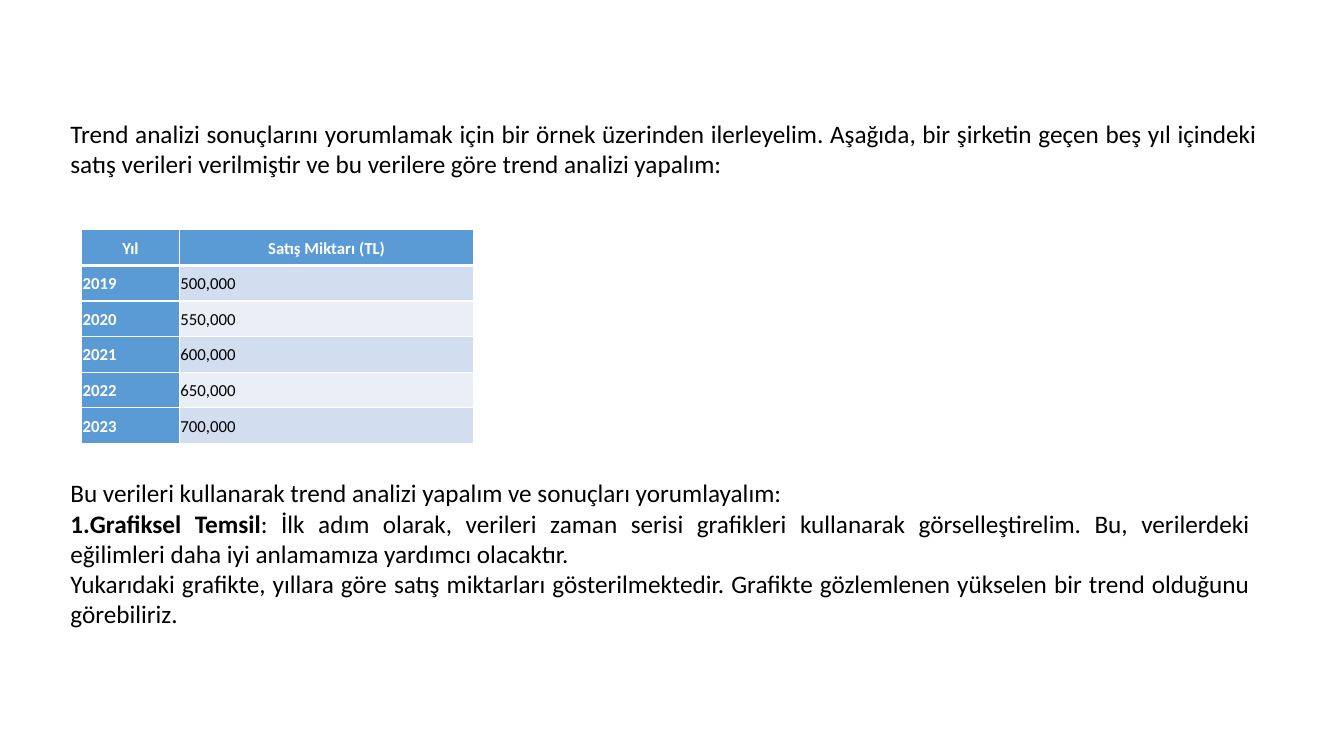
import lxml.etree
import pptx
import pptx.dml.color
import pptx.enum.text
import pptx.oxml.ns
import pptx.util

PX = 9144
FONT = "Calibri"
WHITE = pptx.dml.color.RGBColor(0xFF, 0xFF, 0xFF)
BLACK = pptx.dml.color.RGBColor(0x00, 0x00, 0x00)
BLUE = pptx.dml.color.RGBColor(0x5B, 0x9B, 0xD5)
BANDS = [
    pptx.dml.color.RGBColor(0xD2, 0xDE, 0xEF),
    pptx.dml.color.RGBColor(0xEA, 0xEF, 0xF7),
]
ALIGN = pptx.enum.text.PP_ALIGN

INTRO = [
    ["Trend analizi sonuçlarını yorumlamak için bir örnek üzerinden ilerleyelim. "
     "Aşağıda, bir şirketin geçen beş yıl içindeki satış verileri verilmiştir ve "
     "bu verilere göre trend analizi yapalım:"],
]
COMMENTARY = [
    ["Bu verileri kullanarak trend analizi yapalım ve sonuçları yorumlayalım:"],
    ["Grafiksel Temsil",
     ": İlk adım olarak, verileri zaman serisi grafikleri kullanarak "
     "görselleştirelim. Bu, verilerdeki eğilimleri daha iyi anlamamıza yardımcı "
     "olacaktır."],
    ["Yukarıdaki grafikte, yıllara göre satış miktarları gösterilmektedir. "
     "Grafikte gözlemlenen yükselen bir trend olduğunu görebiliriz."],
]
SALES = [
    ("Yıl", "Satış Miktarı (TL)"),
    ("2019", "500,000"),
    ("2020", "550,000"),
    ("2021", "600,000"),
    ("2022", "650,000"),
    ("2023", "700,000"),
]


def style_run(run, size, color, bold):
    run.font.name = FONT
    run.font.size = pptx.util.Pt(size)
    run.font.color.rgb = color
    run.font.bold = bold


def number_paragraph(paragraph):
    properties = paragraph._p.get_or_add_pPr()
    lxml.etree.SubElement(
        properties, pptx.oxml.ns.qn("a:buAutoNum"), type="arabicPeriod")


def add_text(slide, left, top, width, height, paragraphs):
    box = slide.shapes.add_textbox(left * PX, top * PX, width * PX, height * PX)
    frame = box.text_frame
    frame.word_wrap = True
    frame.auto_size = pptx.enum.text.MSO_AUTO_SIZE.SHAPE_TO_FIT_TEXT
    for index, parts in enumerate(paragraphs):
        paragraph = frame.add_paragraph() if index else frame.paragraphs[0]
        paragraph.alignment = ALIGN.JUSTIFY
        numbered = len(parts) > 1
        if numbered:
            number_paragraph(paragraph)
        for position, part in enumerate(parts):
            run = paragraph.add_run()
            run.text = part
            style_run(run, 18, BLACK, numbered and position == 0)


def add_borders(cell, widths):
    properties = cell._tc.get_or_add_tcPr()
    for side, width in widths.items():
        line = lxml.etree.SubElement(
            properties, pptx.oxml.ns.qn("a:ln" + side),
            w=str(pptx.util.Pt(width)))
        fill = lxml.etree.SubElement(line, pptx.oxml.ns.qn("a:solidFill"))
        lxml.etree.SubElement(
            fill, pptx.oxml.ns.qn("a:srgbClr"), val=str(WHITE))


def style_cell(cell, row, column):
    heading = row == 0 or column == 0
    cell.margin_left = cell.margin_right = PX
    cell.margin_top = cell.margin_bottom = PX
    cell.vertical_anchor = pptx.enum.text.MSO_ANCHOR.MIDDLE
    add_borders(cell, {"L": 1, "R": 1, "T": 3 if row == 1 else 1,
                       "B": 3 if row == 0 else 1})
    cell.fill.solid()
    cell.fill.fore_color.rgb = BLUE if heading else BANDS[(row - 1) % 2]
    paragraph = cell.text_frame.paragraphs[0]
    paragraph.line_spacing = 1.07
    paragraph.alignment = ALIGN.CENTER if row == 0 else ALIGN.LEFT
    style_run(paragraph.runs[0], 12, WHITE if heading else BLACK, heading)


def add_sales_table(slide, left, top, width, height):
    table = slide.shapes.add_table(
        len(SALES), 2, left * PX, top * PX, width * PX, height * PX).table
    table.first_col = True
    year_width = width // 4
    table.columns[0].width = year_width * PX
    table.columns[1].width = (width - year_width) * PX
    for row, values in enumerate(SALES):
        for column, value in enumerate(values):
            cell = table.cell(row, column)
            cell.text_frame.text = value
            style_cell(cell, row, column)


def build_slide(presentation):
    slide = presentation.slides.add_slide(presentation.slide_layouts[6])
    add_sales_table(slide, 81, 228, 389, 212)
    add_text(slide, 60, 469, 1190, 192, COMMENTARY)
    add_text(slide, 60, 112, 1197, 71, INTRO)


def main():
    presentation = pptx.Presentation()
    presentation.slide_width = 1333 * PX
    presentation.slide_height = 750 * PX
    build_slide(presentation)
    presentation.save("out.pptx")


if __name__ == "__main__":
    main()
